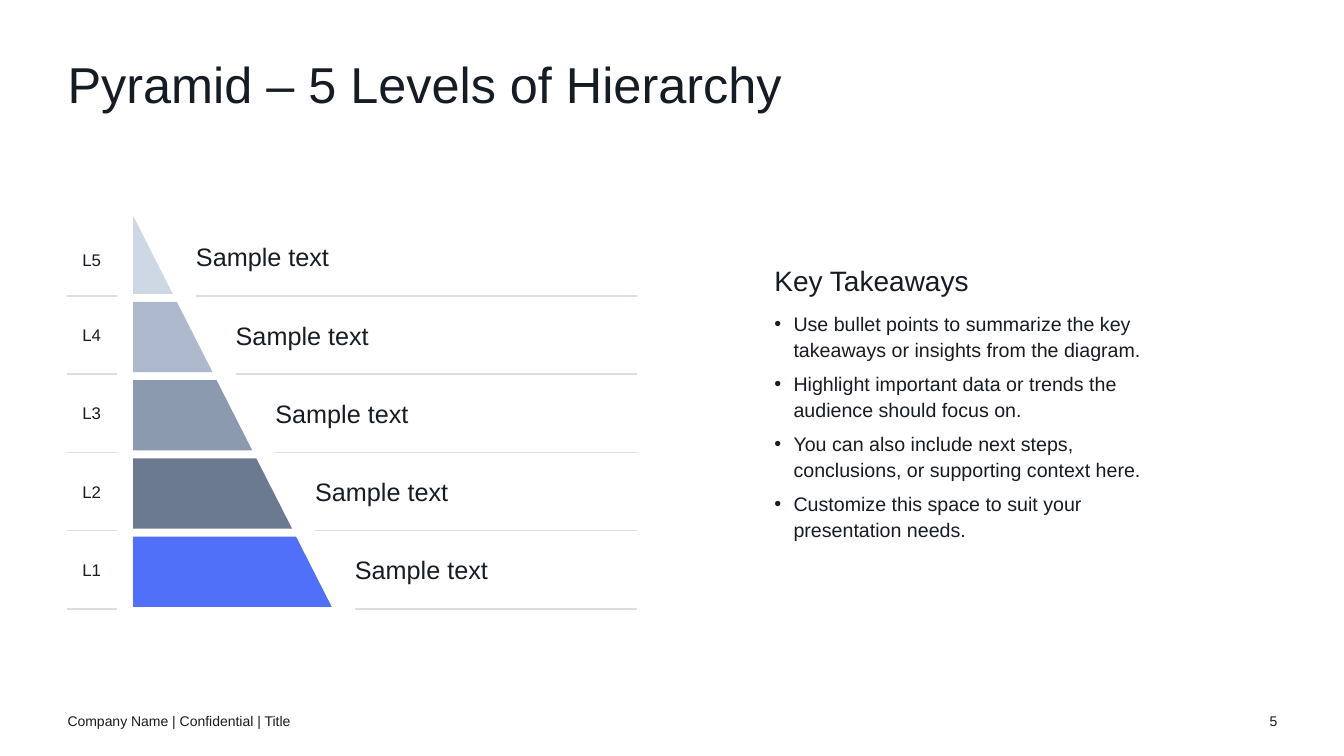
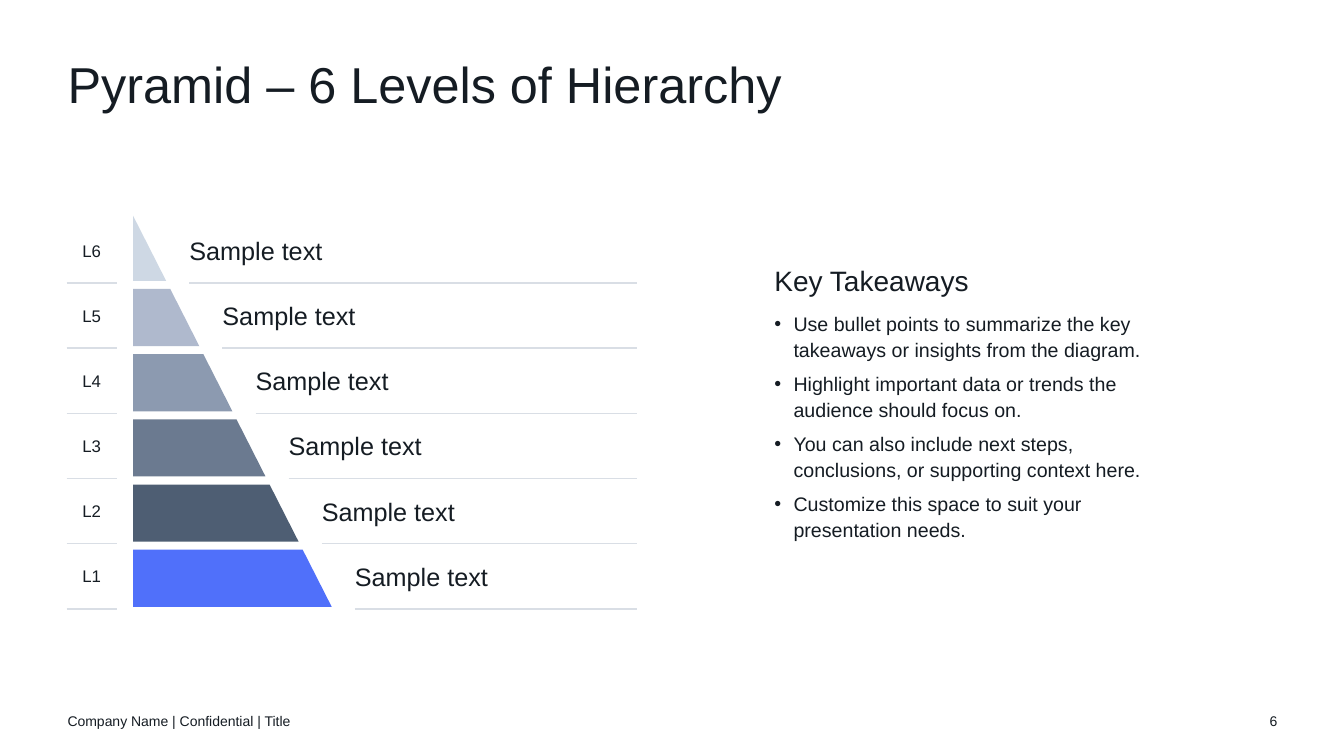
from dataclasses import dataclass
from typing import Any, Optional

import pptx
import pptx.dml.color
import pptx.enum.shapes
import pptx.enum.text
import pptx.oxml.xmlchemy
import pptx.util

Inches = pptx.util.Inches
Pt = pptx.util.Pt
RGBColor = pptx.dml.color.RGBColor
OxmlElement = pptx.oxml.xmlchemy.OxmlElement
ALIGN = pptx.enum.text.PP_ALIGN
ANCHOR = pptx.enum.text.MSO_ANCHOR

# Shared look
FONT = "Arial"
INK = RGBColor(0x15, 0x1C, 0x23)
RULE = RGBColor(0xD9, 0xDE, 0xE5)
ACCENT = RGBColor(0x50, 0x70, 0xFA)
SHADES = (
    RGBColor(0xCE, 0xD8, 0xE4),
    RGBColor(0xAF, 0xB9, 0xCD),
    RGBColor(0x8C, 0x9A, 0xB0),
    RGBColor(0x6B, 0x7A, 0x90),
    RGBColor(0x4E, 0x5E, 0x73),
)
MARGIN = 0.67
FOOTER = "Company Name | Confidential | Title"

# Pyramid geometry, in inches
APEX_X, APEX_Y = 1.32, 2.14
PYRAMID_W, PYRAMID_H = 1.97, 3.88
BAND_GAP = 0.08
RULE_DROP = 0.02
TEXT_GAP = 0.23
RULE_LEFT, RULE_RIGHT = 0.66, 6.32
LABEL_RULE_W = 0.5
TEXT_H = 0.3

TAKEAWAYS = (
    "Use bullet points to summarize the key takeaways or insights from the diagram.",
    "Highlight important data or trends the audience should focus on.",
    "You can also include next steps, conclusions, or supporting context here.",
    "Customize this space to suit your presentation needs.",
)


@dataclass(frozen=True)
class Pyramid:
    page: int
    levels: int
    top_label_drop: float


@dataclass(frozen=True)
class Box:
    x: float
    y: float
    w: float
    h: float


PYRAMIDS = (Pyramid(5, 5, 0.03), Pyramid(6, 6, 0.01))


def add_frame(s: Any, box: Box, anchor: Any = ANCHOR.MIDDLE) -> Any:
    sp = s.shapes.add_textbox(Inches(box.x), Inches(box.y), Inches(box.w), Inches(box.h))
    tf = sp.text_frame
    tf.word_wrap = True
    tf.vertical_anchor = anchor
    tf.margin_left = tf.margin_right = tf.margin_top = tf.margin_bottom = 0
    return tf


def add_run(p: Any, text: str, size: float) -> None:
    r = p.add_run()
    r.text = text
    r.font.name = FONT
    r.font.size = Pt(size)
    r.font.color.rgb = INK


def add_text(s: Any, box: Box, text: str, size: float, align: Any = ALIGN.LEFT,
             anchor: Any = ANCHOR.MIDDLE, spacing: Optional[float] = None) -> None:
    p = add_frame(s, box, anchor).paragraphs[0]
    p.alignment = align
    p.line_spacing = spacing
    add_run(p, text, size)


def add_rule(s: Any, x1: float, x2: float, y: float) -> None:
    line = s.shapes.add_connector(pptx.enum.shapes.MSO_CONNECTOR.STRAIGHT,
                                  Inches(x1), Inches(y), Inches(x2), Inches(y))
    line.line.color.rgb = RULE
    line.line.width = Pt(1)
    line._element.spPr.append(OxmlElement("a:effectLst"))


def add_band(s: Any, top: float, bottom: float, color: RGBColor) -> None:
    def edge(y: float) -> float:
        return APEX_X + (y - APEX_Y) * PYRAMID_W / PYRAMID_H

    corners = [(APEX_X, top), (APEX_X, bottom), (edge(bottom), bottom)]
    if top > APEX_Y:
        corners.append((edge(top), top))
    points = [(Inches(x), Inches(y)) for x, y in corners]
    builder = s.shapes.build_freeform(*points[0])
    builder.add_line_segments(points[1:], close=True)
    sp = builder.convert_to_shape()
    sp.shadow.inherit = False
    sp.fill.solid()
    sp.fill.fore_color.rgb = color
    sp.line.fill.background()


def add_pyramid(s: Any, pyramid: Pyramid) -> None:
    n = pyramid.levels
    pitch = PYRAMID_H / n
    for i, color in enumerate(SHADES[:n - 1] + (ACCENT,)):
        top = APEX_Y + i * pitch
        bottom = top + pitch
        rule_y = bottom + RULE_DROP
        text_x = APEX_X + PYRAMID_W * (i + 1) / n + TEXT_GAP
        text_y = rule_y - pitch / 2 - TEXT_H / 2
        label_y = text_y + (0 if i else pyramid.top_label_drop)
        add_band(s, top + (BAND_GAP if i else 0), bottom, color)
        add_rule(s, RULE_LEFT, RULE_LEFT + LABEL_RULE_W, rule_y)
        add_rule(s, text_x, RULE_RIGHT, rule_y)
        add_text(s, Box(0.71, label_y, 0.4, TEXT_H), f"L{n - i}", 12, ALIGN.CENTER)
        add_text(s, Box(text_x, text_y, 2.8, TEXT_H), "Sample text", 18)


def add_bullet(p: Any) -> None:
    pPr = p._p.get_or_add_pPr()
    pPr.set("marL", str(Inches(0.19)))
    pPr.set("indent", str(-Inches(0.19)))
    font = OxmlElement("a:buFont")
    font.set("typeface", FONT)
    char = OxmlElement("a:buChar")
    char.set("char", "•")
    pPr.extend([font, char])


def add_takeaways(s: Any) -> None:
    tf = add_frame(s, Box(7.68, 1.8, 3.99, 4.35))
    for i, text in enumerate(("Key Takeaways",) + TAKEAWAYS):
        p = tf.add_paragraph() if i else tf.paragraphs[0]
        p.line_spacing = 1.1
        p.space_before = Pt(6)
        if i:
            add_bullet(p)
        else:
            p.space_after = Pt(3)
        add_run(p, text, 14 if i else 20)


def add_slide(prs: Any, pyramid: Pyramid) -> None:
    s = prs.slides.add_slide(prs.slide_layouts[6])
    # Title and footer
    add_text(s, Box(MARGIN, 0.6, 12, 0.6), f"Pyramid – {pyramid.levels} Levels of Hierarchy",
             36, anchor=ANCHOR.TOP, spacing=0.9)
    add_text(s, Box(MARGIN, 6.95, 4.5, 0.4), FOOTER, 10)
    add_text(s, Box(12.17, 6.95, 0.5, 0.4), str(pyramid.page), 10, ALIGN.RIGHT)
    # Body
    add_pyramid(s, pyramid)
    add_takeaways(s)


def main() -> None:
    prs = pptx.Presentation()
    prs.slide_width = Inches(13.33)
    prs.slide_height = Inches(7.5)
    for pyramid in PYRAMIDS:
        add_slide(prs, pyramid)
    prs.save("out.pptx")


if __name__ == "__main__":
    main()
